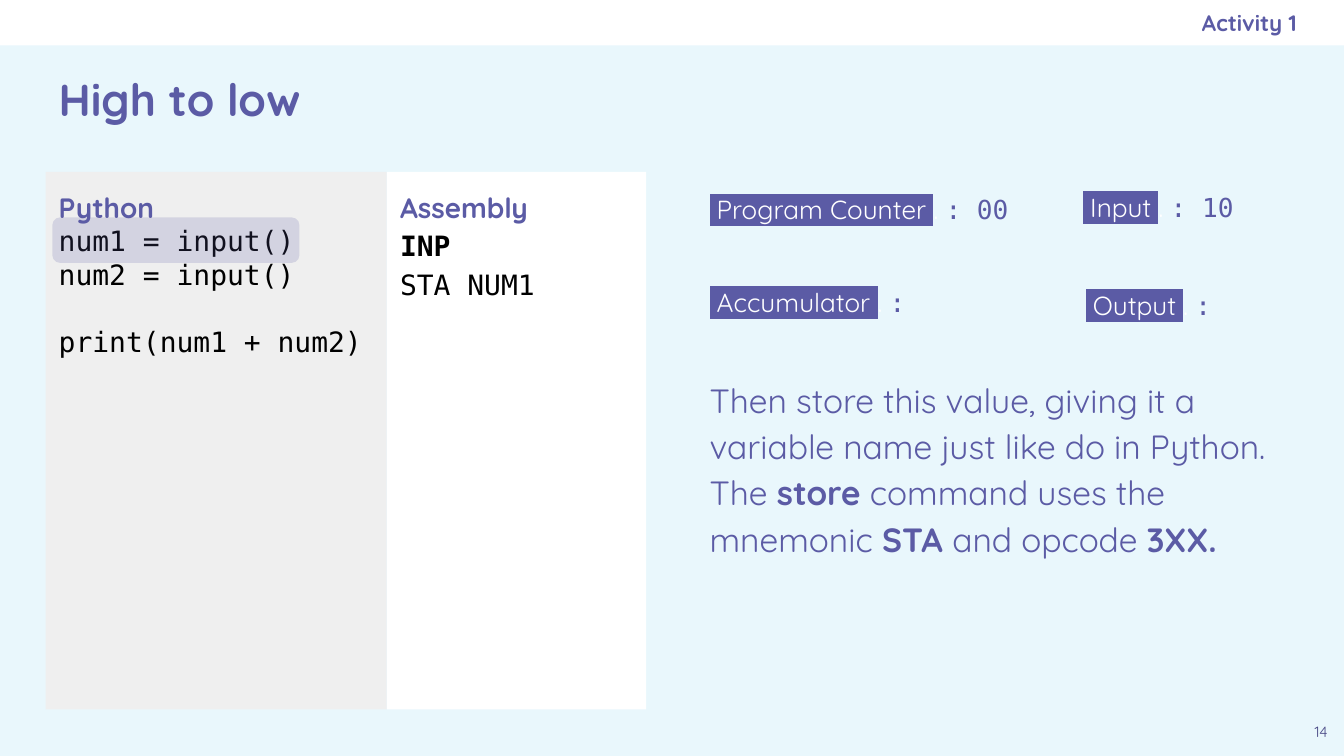
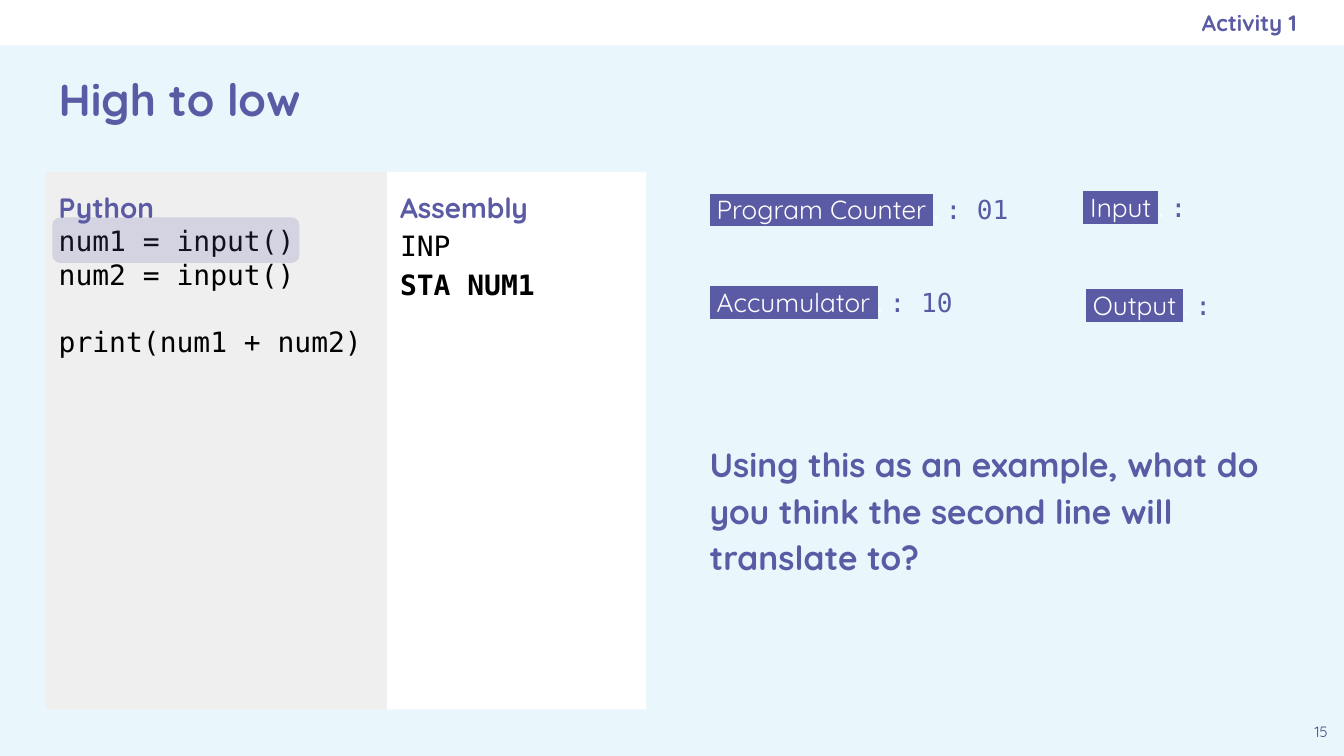
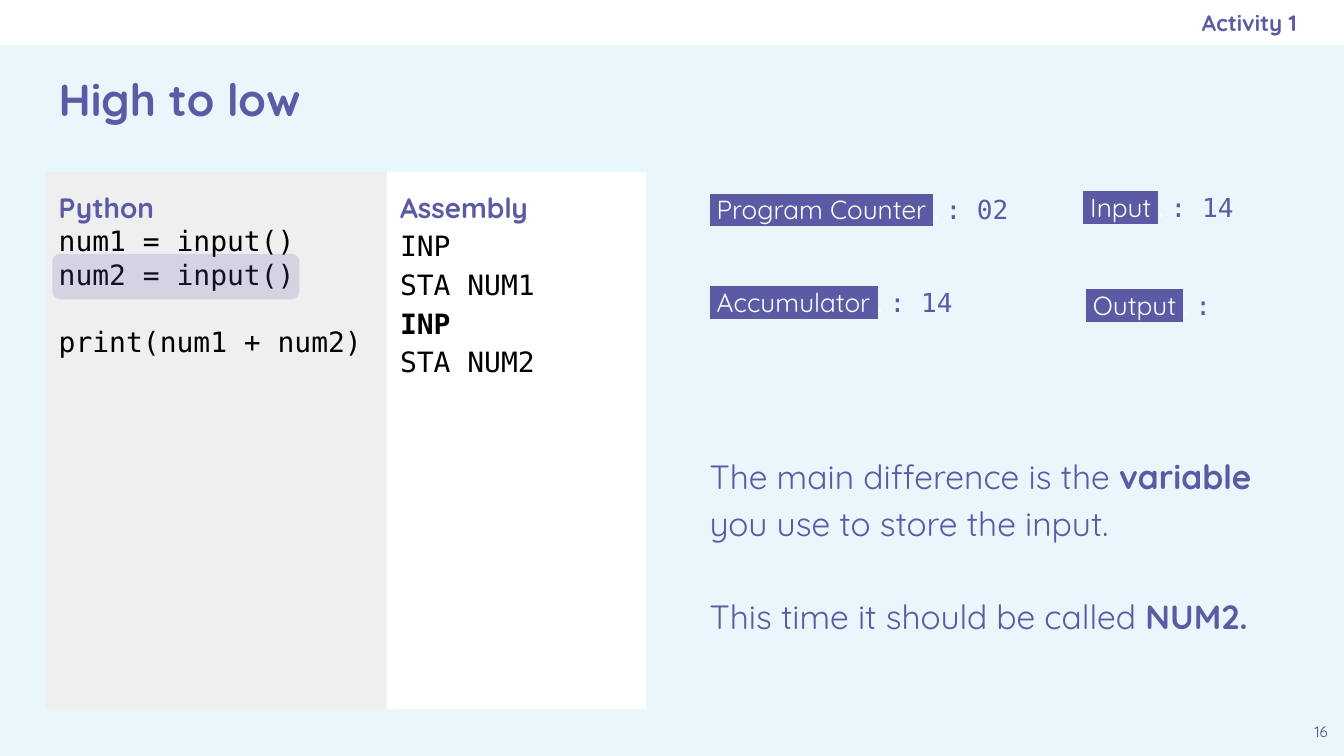
from lxml import etree
from pptx import Presentation
from pptx.dml.color import RGBColor
from pptx.enum import shapes, text
from pptx.oxml.ns import qn
from pptx.util import Cm, Pt

# Content: **...** marks bold
TITLE, ACTIVITY, FIRST_NUMBER = "High to low", "Activity 1", 14
PYTHON = ["num1 = input()", "num2 = input()", "print(num1 + num2)"]
SLIDES = [
    dict(assembly=["**INP**", "STA NUM1"], code_row=0, note_top=6.81,
         registers=[": 00", ":", ": 10", ":"],
         note=["Then store this value, giving it a variable name just like do in "
               "Python. The **store **command uses the mnemonic **STA **and opcode **3XX.**"]),
    dict(assembly=["INP", "**STA NUM1**"], code_row=0, note_top=8.03,
         registers=[": 01", ": 10", ":", ":"],
         note=["**Using this as an example, what do you think the second line "
               "will translate to?**"]),
    dict(assembly=["INP", "STA NUM1", "**INP**", "STA NUM2"], code_row=1, note_top=8.26,
         registers=[": 02", ": 14", ": 14", ":"],
         note=["The main difference is the **variable** you use to store the input.",
               "This time it should be called **NUM2.**"]),
]
# Register name with left, top, width in cm
REGISTERS = [("Program Counter", 13.16, 3.33, 6.2), ("Accumulator", 13.16, 5.08, 6.2),
             ("Input", 20.22, 3.28, 4.27), ("Output", 20.27, 5.13, 4.27)]

# Shared style
PURPLE = RGBColor(0x5B, 0x5B, 0xA5)
NUMBER = RGBColor(0x49, 0x49, 0x85)
PALE = RGBColor(0xE9, 0xF7, 0xFC)
GREY = RGBColor(0xEF, 0xEF, 0xEF)
WHITE = RGBColor(0xFF, 0xFF, 0xFF)
BLACK = RGBColor(0, 0, 0)
SANS, MONO = "Quicksand", "DejaVu Sans Mono"
LEFT, ALIGN = text.PP_ALIGN.LEFT, text.PP_ALIGN
TOP, MIDDLE = text.MSO_ANCHOR.TOP, text.MSO_ANCHOR.MIDDLE
WIDTH, BAND, INSET = 25.4, 0.86, 0.25
PANEL_TOP, PANEL_BOTTOM = 3.25, 13.41


def place(sp, left, top, width, height):
    sp.left, sp.top, sp.width, sp.height = Cm(left), Cm(top), Cm(width), Cm(height)


def set_frame(sp, anchor=TOP, right=INSET, wrap=True):
    tf = sp.text_frame
    tf.auto_size, tf.word_wrap = text.MSO_AUTO_SIZE.NONE, wrap
    tf.vertical_anchor = anchor
    tf.margin_left = tf.margin_top = tf.margin_bottom = Cm(INSET)
    tf.margin_right = Cm(right)
    return tf


def add_run(p, words, size, color, font=SANS, bold=False):
    r = p.add_run()
    r.text = words
    r.font.size, r.font.name, r.font.bold = Pt(size), font, bold
    r.font.color.rgb = color
    return r


def write(tf, lines, align=LEFT):
    """Each line is (marked text, size, colour, font, line spacing, space before)."""
    for i, (marked, size, color, font, spacing, before) in enumerate(lines):
        p = tf.add_paragraph() if i else tf.paragraphs[0]
        pPr = p._p.get_or_add_pPr()
        pPr.set("marL", "0")
        pPr.set("indent", "0")
        etree.SubElement(pPr, qn("a:buNone"))
        p.alignment, p.line_spacing = align, spacing
        p.space_before, p.space_after = Pt(before), Pt(0)
        for j, words in enumerate(marked.split("**")):
            if words:
                add_run(p, words, size, color, font, bold=j % 2 == 1)


def heading(words, size, spacing=1.0):
    return f"**{words}**", size, PURPLE, SANS, spacing, 0


def plain_shape(s, kind, left, top, width, height, color):
    sp = s.shapes.add_shape(kind, Cm(left), Cm(top), Cm(width), Cm(height))
    sp.shadow.inherit = False
    sp.fill.solid()
    sp.fill.fore_color.rgb = color
    sp.line.fill.background()
    return sp


def add_band(s, master):
    """Draw the top band and move it to the slide master."""
    sp = plain_shape(s, shapes.MSO_SHAPE.RECTANGLE, 0, 0, WIDTH, BAND, WHITE)
    sp.element.xpath(".//p:cNvPr")[0].set("id", "100")
    master.shapes.element.insert(2, sp.element)


def add_panel(sp, left, width, color, lines):
    place(sp, left, PANEL_TOP, width, PANEL_BOTTOM - PANEL_TOP)
    sp.fill.solid()
    sp.fill.fore_color.rgb = color
    write(set_frame(sp), lines)


def add_code_marker(s, row):
    sp = plain_shape(s, shapes.MSO_SHAPE.ROUNDED_RECTANGLE,
                     0.99, 4.11 + 0.69 * row, 4.67, 0.86, PURPLE)
    sp.adjustments[0] = 0.17
    color = sp.element.spPr.find(qn("a:solidFill"))[0]
    etree.SubElement(color, qn("a:alpha")).set("val", "19000")


def add_register(s, name, left, top, width, value):
    sp = s.shapes.add_textbox(Cm(left), Cm(top), Cm(width), Cm(1.02))
    p = set_frame(sp, right=0.15).paragraphs[0]
    p.line_spacing = 1.14
    r = add_run(p, f" {name} ", 14, WHITE)
    mark = etree.Element(qn("a:highlight"))
    etree.SubElement(mark, qn("a:srgbClr")).set("val", str(PURPLE))
    r.font._element.find(qn("a:solidFill")).addnext(mark)
    add_run(p, ". ", 14, WHITE)
    add_run(p, value, 14, PURPLE, MONO)


def add_slide(s, number, data):
    ph = {shape.placeholder_format.idx: shape for shape in s.placeholders}

    # Title and activity label
    place(ph[0], 0.86, 0.89, 23.67, 1.93)
    write(set_frame(ph[0], MIDDLE), [heading(TITLE, 24)])
    place(ph[3], 14.6, 0, 9.91, BAND)
    write(set_frame(ph[3], MIDDLE, right=0), [heading(ACTIVITY, 12)], ALIGN.RIGHT)

    # Code panels
    code = [(line, 15, BLACK, MONO, 1.0, 18 if line.startswith("print") else 0)
            for line in PYTHON]
    add_panel(ph[1], 0.86, 6.45, GREY, [heading("Python", 15, 1.15)] + code)
    steps = [(line, 15, BLACK, MONO, 1.15, 0) for line in data["assembly"]]
    add_panel(ph[2], 7.31, 4.9, WHITE, [heading("Assembly", 15, 1.15)] + steps)
    add_code_marker(s, data["code_row"])

    # Explanation
    place(ph[4], 13.16, data["note_top"], 11.38, PANEL_BOTTOM - data["note_top"])
    write(set_frame(ph[4]), [(line, 18, PURPLE, SANS, 1.15, 25 if i else 0)
                             for i, line in enumerate(data["note"])])

    # Registers
    for register, value in zip(REGISTERS, data["registers"]):
        add_register(s, *register, value)

    # Slide number
    sp = s.shapes.add_textbox(Cm(24.54), Cm(PANEL_BOTTOM), Cm(0.86), Cm(0.86))
    p = set_frame(sp, wrap=False).paragraphs[0]
    p.alignment = ALIGN.CENTER
    add_run(p, str(number), 8, NUMBER)


def main():
    prs = Presentation()
    prs.slide_width, prs.slide_height = Cm(WIDTH), Cm(14.29)
    master = prs.slide_master
    master.background.fill.solid()
    master.background.fill.fore_color.rgb = PALE
    comparison = prs.slide_layouts.get_by_name("Comparison")
    for i, data in enumerate(SLIDES):
        s = prs.slides.add_slide(comparison)
        if i == 0:
            add_band(s, master)
        add_slide(s, FIRST_NUMBER + i, data)
    prs.save("out.pptx")


if __name__ == "__main__":
    main()
